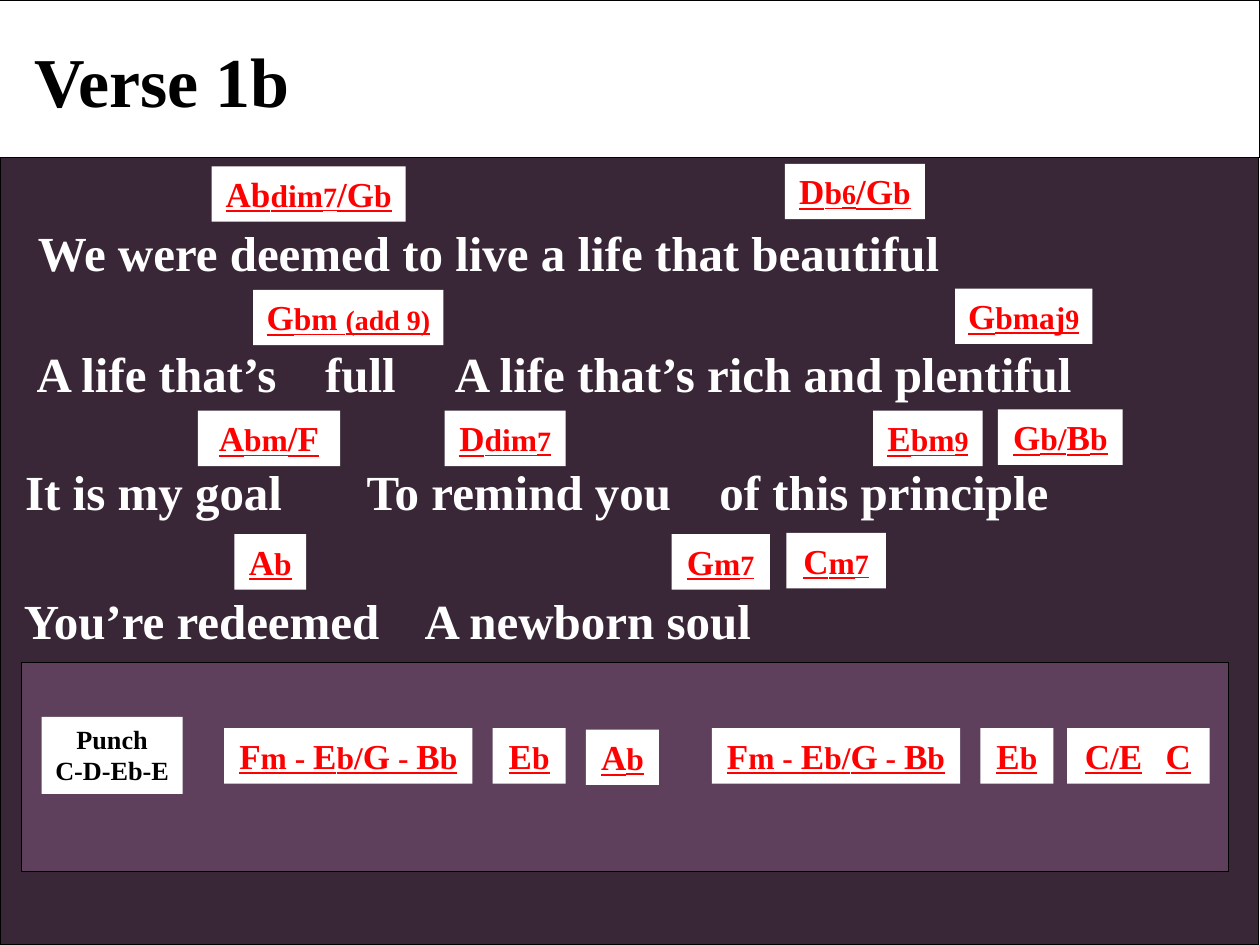
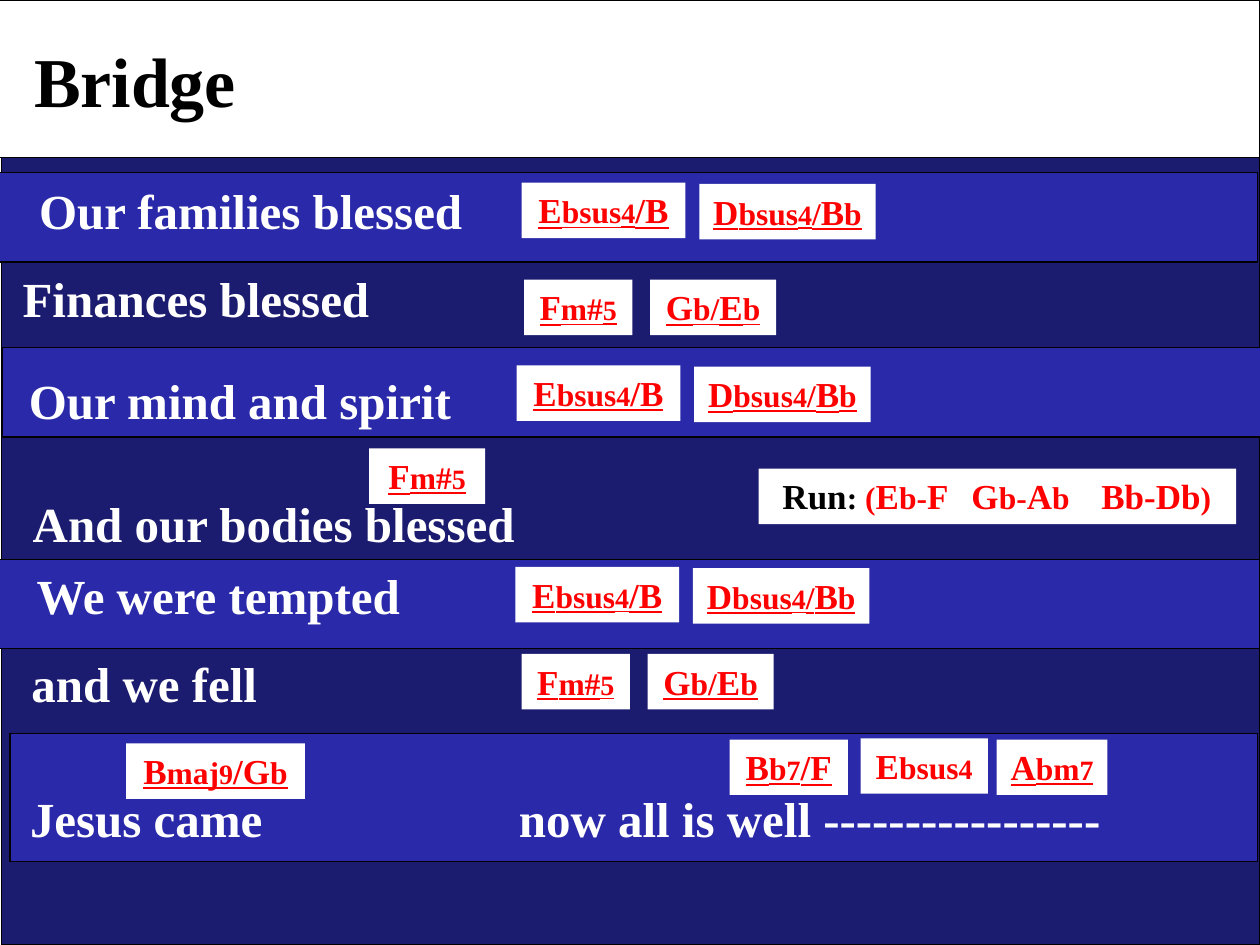
"""Builds two song chart slides with lyrics and the chords above them."""
from lxml.etree import SubElement
from pptx import Presentation
from pptx.dml.color import RGBColor
from pptx.enum.shapes import MSO_SHAPE as Shape
from pptx.enum.text import MSO_ANCHOR as Anchor, MSO_AUTO_SIZE as AutoSize, PP_ALIGN as Align
from pptx.oxml.ns import qn
from pptx.util import Inches, Pt

WHITE, BLACK, RED = "FFFFFF", "000000", "FF0000"
PLUM, MAUVE = "392738", "5E405D"
NAVY, BLUE = "1B1B6F", "2929A9"
CHORD_SIZES = {"^": 20, "~": 18, "_": 16}


def rgb(value):
    return RGBColor.from_string(value)


def sized_parts(markup):
    parts = [[20, ""]]
    for letter in markup:
        if letter in CHORD_SIZES:
            parts.append([CHORD_SIZES[letter], ""])
        else:
            parts[-1][1] += letter
    return parts


class SongChart:
    FONT = "Times New Roman"

    def __init__(self):
        self.deck = Presentation()
        self.deck.slide_width, self.deck.slide_height = Inches(10), Inches(7.5)
        self.slide = None

    def start(self, name, name_width, background, bands):
        self.slide = self.deck.slides.add_slide(self.deck.slide_layouts[5])
        self.band(*background)
        for band in bands:
            self.band(*band)
        self.band(-0.01, 0, 10.01, 1.25, WHITE)
        title = self.slide.shapes.title
        title.left, title.top = Inches(0.17), Inches(0.25)
        title.width, title.height = Inches(name_width), Inches(0.77)
        self.fill(title, WHITE)
        self.frame(title)
        title.text_frame.text = name
        paragraph = title.text_frame.paragraphs[0]
        paragraph.alignment = Align.LEFT
        self.style(paragraph.runs[0], 40, BLACK)
        self.slide.shapes._spTree.append(title._element)

    def fill(self, shape, color):
        shape.fill.solid()
        shape.fill.fore_color.rgb = rgb(color)

    def style(self, run, size, color, underline=False):
        font = run.font
        font.name, font.size, font.bold = self.FONT, Pt(size), True
        font.underline = underline
        font.color.rgb = rgb(color)

    def frame(self, shape, wrap=True, inset=0.1):
        frame = shape.text_frame
        frame.auto_size, frame.word_wrap = AutoSize.NONE, wrap
        frame.vertical_anchor = Anchor.TOP
        frame.margin_left = Inches(inset)
        return frame

    def tabs(self, paragraph, stops):
        if stops:
            tab_list = SubElement(paragraph._p.get_or_add_pPr(), qn("a:tabLst"))
            for stop in stops:
                SubElement(tab_list, qn("a:tab"), pos=str(Inches(stop)), algn="l")

    def rectangle(self, x, y, width, height, color):
        shape = self.slide.shapes.add_shape(
            Shape.RECTANGLE, Inches(x), Inches(y), Inches(width), Inches(height))
        shape.shadow.inherit = False
        self.fill(shape, color)
        return shape

    def band(self, x, y, width, height, color):
        line = self.rectangle(x, y, width, height, color).line
        line.color.rgb = rgb(BLACK)
        line.width = Pt(0.75)

    def label(self, x, y, width, height, wrap=False, inset=0.1):
        shape = self.rectangle(x, y, width, height, WHITE)
        shape.line.fill.background()
        paragraph = self.frame(shape, wrap, inset).paragraphs[0]
        paragraph.alignment = Align.LEFT if wrap else Align.CENTER
        return paragraph

    def chord(self, markup, x, y, width, underline=True, inset=0.1, stops=()):
        paragraph = self.label(x, y, width, 0.44, bool(stops), inset)
        self.tabs(paragraph, stops)
        for size, text in sized_parts(markup):
            run = paragraph.add_run()
            run.text = text
            self.style(run, size, RED, underline)
        return paragraph

    def note(self, text, x, y, width, height):
        paragraph = self.label(x, y, width, height)
        paragraph.text = text
        for run in paragraph.runs:
            self.style(run, 15, BLACK)

    def lyric(self, text, x, y, width, indent, stops=()):
        box = self.slide.shapes.add_textbox(
            Inches(x), Inches(y), Inches(width), Inches(0.57))
        paragraph = self.frame(box, inset=indent).paragraphs[0]
        paragraph.text = text
        self.tabs(paragraph, stops)
        self.style(paragraph.runs[0], 28, WHITE)


def verse(chart):
    chart.start("Verse 1b", 3.83, (0, 1.25, 9.99, 6.25, PLUM),
                [(0.17, 5.26, 9.58, 1.66, MAUVE)])
    for lyric in (
        ("We were deemed to live a life that beautiful", 0.01, 1.72, 9.99, 0.29),
        ("A life that’s\tfull\tA life that’s rich and plentiful",
         0, 2.68, 10, 0.29, (2.29, 3.32)),
        ("It is my goal\tTo remind you\tof this principle",
         0, 3.61, 10.04, 0.2, (2.71, 5.51)),
        ("You’re redeemed\tA newborn soul", -0.01, 4.64, 10.03, 0.2, (3.18,)),
    ):
        chart.lyric(*lyric)
    for chord in (
        ("Ab~dim_7^/G~b", 1.68, 1.32, 1.54), ("D~b_6^/G~b", 6.23, 1.3, 1.11),
        ("G~bm _(add 9)", 2.01, 2.3, 1.51), ("G~bmaj_9", 7.58, 2.29, 1.09),
        ("A~bm^/F", 1.57, 3.26, 1.13), ("D~dim_7", 3.53, 3.26, 0.96),
        ("E~bm_9", 6.93, 3.26, 0.87), ("G~b/^B~b", 7.92, 3.25, 0.99),
        ("A~b", 1.86, 4.24, 0.57), ("G~m_7", 5.33, 4.24, 0.78),
        ("C~m_7", 6.24, 4.23, 0.79), ("A~b", 4.65, 5.79, 0.58),
    ):
        chart.chord(*chord)
    chart.note("Punch\vC-D-Eb-E", 0.33, 5.69, 1.12, 0.61)
    for x in (1.78, 5.65):
        chart.chord("F~m - ^E~b/^G~ - ^B~b", x, 5.78, 1.97)
        chart.chord("E~b", x + 2.13, 5.78, 0.58)
    chart.chord("C~/^E~\t^C", 8.47, 5.78, 1.13, inset=0.14, stops=(0.64,))


def bridge(chart):
    chart.start("Bridge", 3.33, (0.01, 1.17, 9.99, 6.33, NAVY), [
        (-0.03, 1.37, 10.01, 0.71, BLUE), (0.02, 2.76, 10.01, 0.71, BLUE),
        (-0.01, 4.44, 10.01, 0.71, BLUE), (0.08, 5.82, 9.9, 1.02, BLUE)])
    for lyric in (
        ("Our families blessed", 0.02, 1.38, 9.21, 0.29),
        ("Finances blessed", -0.02, 2.08, 10, 0.2),
        ("Our mind and spirit", 0.03, 2.89, 8.97, 0.2),
        ("And our bodies blessed", 0.06, 3.87, 10.03, 0.2),
        ("We were tempted", 0.09, 4.44, 9.21, 0.2),
        ("and we fell", 0.05, 5.14, 10, 0.2),
        ("Jesus came\tnow all is well -----------------",
         0.14, 6.21, 9.26, 0.1, (3.88,)),
    ):
        chart.lyric(*lyric)
    for x, y in ((4.14, 1.45), (4.1, 2.9), (4.09, 4.5)):
        chart.chord("E~bsus_4^/B", x, y, 1.3)
        chart.chord("D~bsus_4~/^B~b", x + 1.41, y + 0.01, 1.4)
    for x, y in ((4.16, 2.22), (4.14, 5.19)):
        chart.chord("F~m#_5", x, y, 0.86)
        chart.chord("G~b/^E~b", x + 1, y, 1)
    for chord in (
        ("F~m#_5", 2.93, 3.56, 0.92), ("B~maj_9^/G~b", 1, 5.9, 1.42),
        ("B~b_7^/F", 5.79, 5.87, 0.94), ("E~bsus_4", 6.83, 5.86, 1.01, False),
        ("A~bm_7", 7.91, 5.87, 0.88),
    ):
        chart.chord(*chord)
    bass_run = chart.chord("Run~: ~(^E~b-^F\t^G~b-^A~b\t^Bb-Db~)", 6.02, 3.72, 3.79,
                           underline=False, inset=0.19, stops=(1.5, 2.53))
    for heading in bass_run.runs[:2]:
        heading.font.color.rgb = rgb(BLACK)


def main():
    chart = SongChart()
    verse(chart)
    bridge(chart)
    chart.deck.save("out.pptx")


if __name__ == "__main__":
    main()
